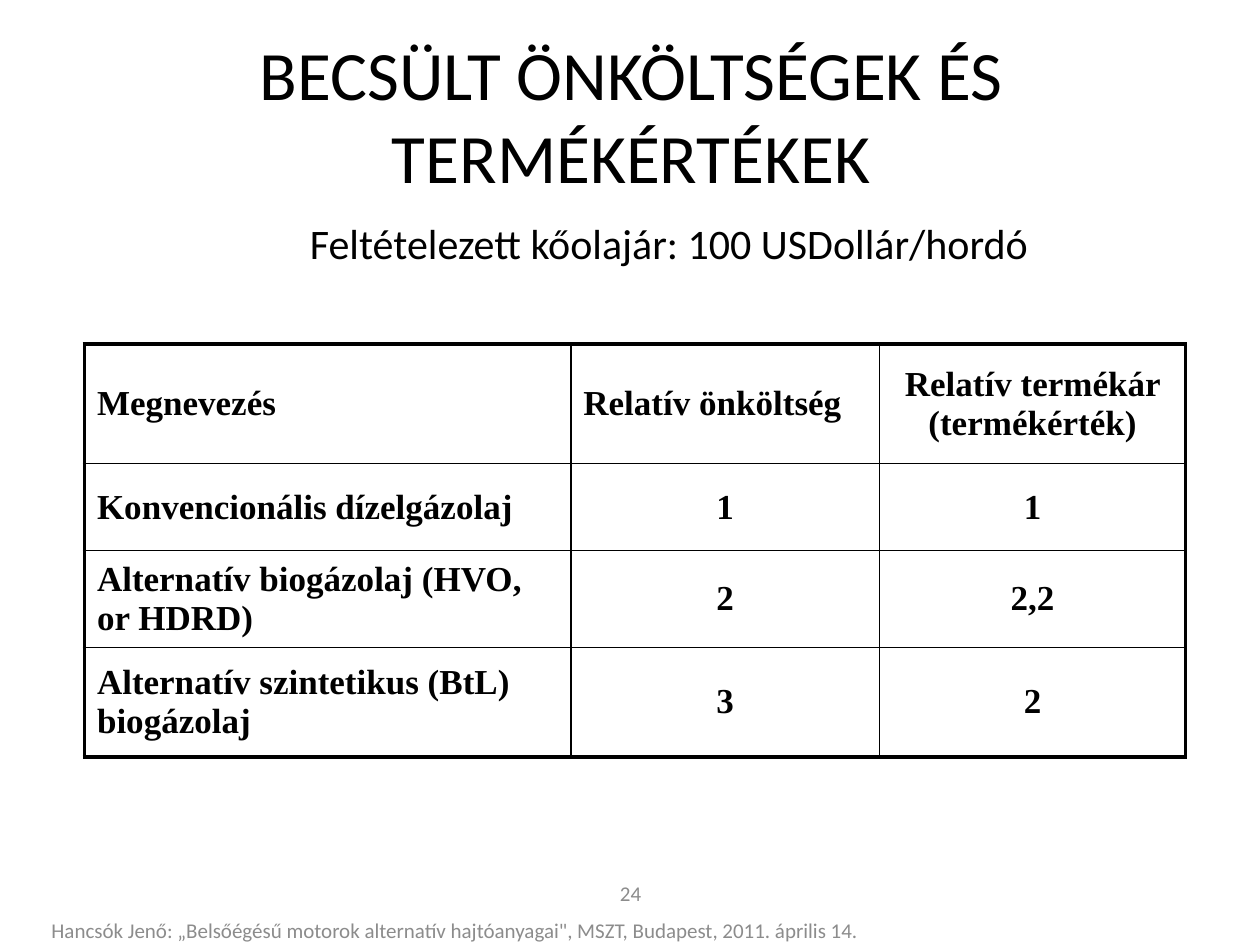
from pptx import Presentation
from pptx.dml.color import RGBColor
from pptx.enum.text import MSO_ANCHOR as Anchor, PP_ALIGN as Align
from pptx.oxml.ns import qn
from pptx.util import Inches, Pt
from lxml.etree import SubElement

BLACK = RGBColor(0x00, 0x00, 0x00)
GRAY = RGBColor(0x8C, 0x8C, 0x8C)
THIN, THICK = 1, 2.25

COL_WIDTHS = [3.86, 2.45, 2.43]
ROW_HEIGHTS = [0.95, 0.69, 0.72, 0.87]
ROWS = [
    ["Megnevezés", "Relatív önköltség", "Relatív termékár (termékérték)"],
    ["Konvencionális dízelgázolaj", "1", "1"],
    ["Alternatív biogázolaj (HVO, or HDRD)", "2", "2,2"],
    ["Alternatív szintetikus (BtL) biogázolaj", "3", "2"],
]


def style(p, size, color, font="Calibri", align=Align.LEFT, bold=False):
    p.alignment = align
    p.font.size = Pt(size)
    p.font.name = font
    p.font.bold = bold
    p.font.color.rgb = color


def add_text(s, box, text, size, color, align=Align.CENTER, anchor=Anchor.MIDDLE):
    tf = s.shapes.add_textbox(*map(Inches, box)).text_frame
    tf.word_wrap = True
    tf.vertical_anchor = anchor
    p = tf.paragraphs[0]
    p.text = text
    style(p, size, color, align=align)
    return p


def set_borders(cell, widths):
    tc_pr = cell._tc.get_or_add_tcPr()
    for side, width in zip("LRTB", widths):
        ln = SubElement(tc_pr, qn(f"a:ln{side}"), w=str(Pt(width)))
        fill = SubElement(ln, qn("a:solidFill"))
        SubElement(fill, qn("a:srgbClr"), val=str(BLACK))


def add_heading(s, left, top):
    add_text(s, (left, top, 9, 1.25), "BECSÜLT ÖNKÖLTSÉGEK ÉS TERMÉKÉRTÉKEK", 39.6, BLACK)
    p = add_text(s, (left + 0.96, top + 1.4, 7.3, 0.55),
                 "Feltételezett kőolajár: 100 USDollár/hordó", 24, BLACK, anchor=Anchor.TOP)
    p._p.get_or_add_pPr().set("marL", str(Inches(0.38)))


def add_cost_table(s, left, top):
    n_rows, n_cols = len(ROWS), len(COL_WIDTHS)
    size = sum(COL_WIDTHS), sum(ROW_HEIGHTS)
    table = s.shapes.add_table(n_rows, n_cols, *map(Inches, (left, top, *size))).table
    table.first_row = table.horz_banding = False
    for col, width in zip(table.columns, COL_WIDTHS):
        col.width = Inches(width)
    for row, height in zip(table.rows, ROW_HEIGHTS):
        row.height = Inches(height)

    for i, texts in enumerate(ROWS):
        for j, text in enumerate(texts):
            cell = table.cell(i, j)
            cell.text = text
            cell.vertical_anchor = Anchor.MIDDLE
            # The first column and the cost heading are left-aligned
            align = Align.LEFT if j == 0 or (i, j) == (0, 1) else Align.CENTER
            style(cell.text_frame.paragraphs[0], 20, BLACK, "Times New Roman", align, True)
            # Thick outer frame, thin inner grid
            outer = (j == 0, j == n_cols - 1, i == 0, i == n_rows - 1)
            set_borders(cell, [THICK if edge else THIN for edge in outer])
            cell.fill.background()


def add_footer(s, left, top):
    add_text(s, (left + 3.11, top, 3.17, 0.52), "24", 12, GRAY)
    add_text(s, (left, top + 0.44, 8.59, 0.23),
             "Hancsók Jenő: „Belsőégésű motorok alternatív hajtóanyagai\", "
             "MSZT, Budapest, 2011. április 14.", 12, GRAY, Align.LEFT)


def main():
    prs = Presentation()
    prs.slide_width, prs.slide_height = Inches(10), Inches(7.5)
    s = prs.slides.add_slide(prs.slide_layouts[6])
    add_heading(s, 0.51, 0.28)
    add_cost_table(s, 0.67, 2.73)
    add_footer(s, 0.31, 6.83)
    prs.save("out.pptx")


if __name__ == "__main__":
    main()
